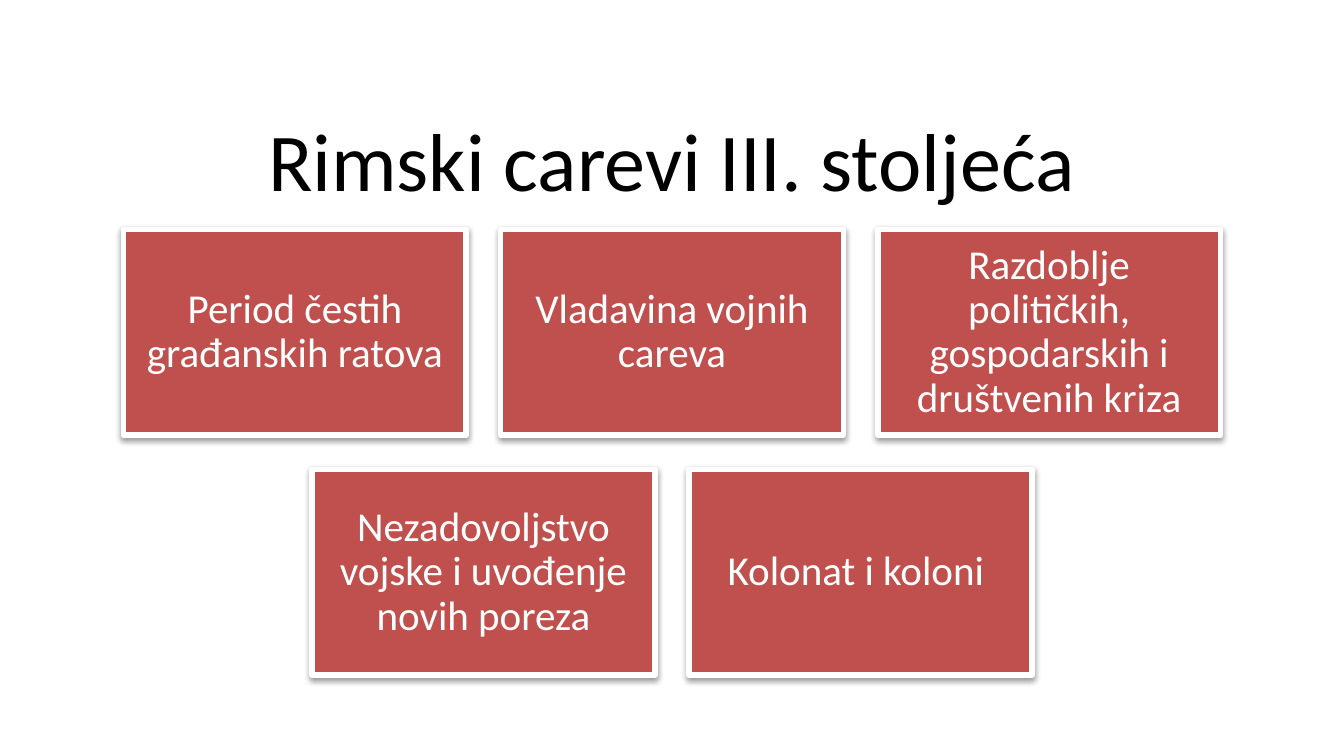
from lxml import etree
from pptx import Presentation
from pptx.dml.color import RGBColor
from pptx.enum.shapes import MSO_SHAPE
from pptx.enum.text import MSO_ANCHOR, PP_ALIGN
from pptx.oxml.ns import qn
from pptx.util import Pt

RECTANGLE = MSO_SHAPE.RECTANGLE
MIDDLE = MSO_ANCHOR.MIDDLE
CENTER = PP_ALIGN.CENTER

FONT = "Calibri"
COLORS = {"title": "000000", "card": "C0504D", "light": "FFFFFF", "shadow": "000000"}

TITLE = "Rimski carevi III. stoljeća"
CARD_ROWS = [
    [
        "Period čestih građanskih ratova",
        "Vladavina vojnih careva",
        "Razdoblje političkih, gospodarskih i društvenih kriza",
    ],
    ["Nezadovoljstvo vojske i uvođenje novih poreza", "Kolonat i koloni "],
]
CARD_WIDTH, CARD_HEIGHT, CARD_GAP = 183.6, 110.2, 18.4


def color(name):
    return RGBColor.from_string(COLORS[name])


def write_centered(frame, text, size, color_name):
    frame.word_wrap = True
    frame.vertical_anchor = MIDDLE
    paragraph = frame.paragraphs[0]
    paragraph.alignment = CENTER
    paragraph.line_spacing = 0.9
    run = paragraph.add_run()
    run.text = text
    run.font.name = FONT
    run.font.size = Pt(size)
    run.font.color.rgb = color(color_name)


def add_soft_shadow(card):
    card.shadow.inherit = False
    effects = card.element.spPr.find(qn("a:effectLst"))
    shadow = etree.SubElement(
        effects, qn("a:outerShdw"), blurRad=str(Pt(3.1)), dist=str(Pt(1.6)),
        dir="5400000", rotWithShape="0")
    tint = etree.SubElement(shadow, qn("a:srgbClr"), val=COLORS["shadow"])
    etree.SubElement(tint, qn("a:alpha"), val="38000")


def add_title(slide, left, top, width, height):
    title = slide.shapes.add_textbox(Pt(left), Pt(top), Pt(width), Pt(height))
    write_centered(title.text_frame, TITLE, 44, "title")


def add_card(slide, text, left, top):
    card = slide.shapes.add_shape(
        RECTANGLE, Pt(left), Pt(top), Pt(CARD_WIDTH), Pt(CARD_HEIGHT))
    card.fill.solid()
    card.fill.fore_color.rgb = color("card")
    card.line.color.rgb = color("light")
    card.line.width = Pt(3)
    add_soft_shadow(card)
    frame = card.text_frame
    frame.margin_left = frame.margin_right = Pt(6.6)
    frame.margin_top = frame.margin_bottom = Pt(6.6)
    write_centered(frame, text, 22, "light")


def add_card_grid(slide, left, top, width):
    """Stack the rows of cards, each row centred in the given width."""
    for row, texts in enumerate(CARD_ROWS):
        row_width = len(texts) * (CARD_WIDTH + CARD_GAP) - CARD_GAP
        row_left = left + (width - row_width) / 2
        row_top = top + row * (CARD_HEIGHT + CARD_GAP)
        for column, text in enumerate(texts):
            add_card(slide, text, row_left + column * (CARD_WIDTH + CARD_GAP), row_top)


def main():
    presentation = Presentation()
    presentation.slide_width = Pt(720)
    presentation.slide_height = Pt(405)
    slide = presentation.slides.add_slide(presentation.slide_layouts[6])
    add_title(slide, 36, 60.5, 648, 56)
    add_card_grid(slide, 36, 123, 648)
    presentation.save("out.pptx")


if __name__ == "__main__":
    main()
